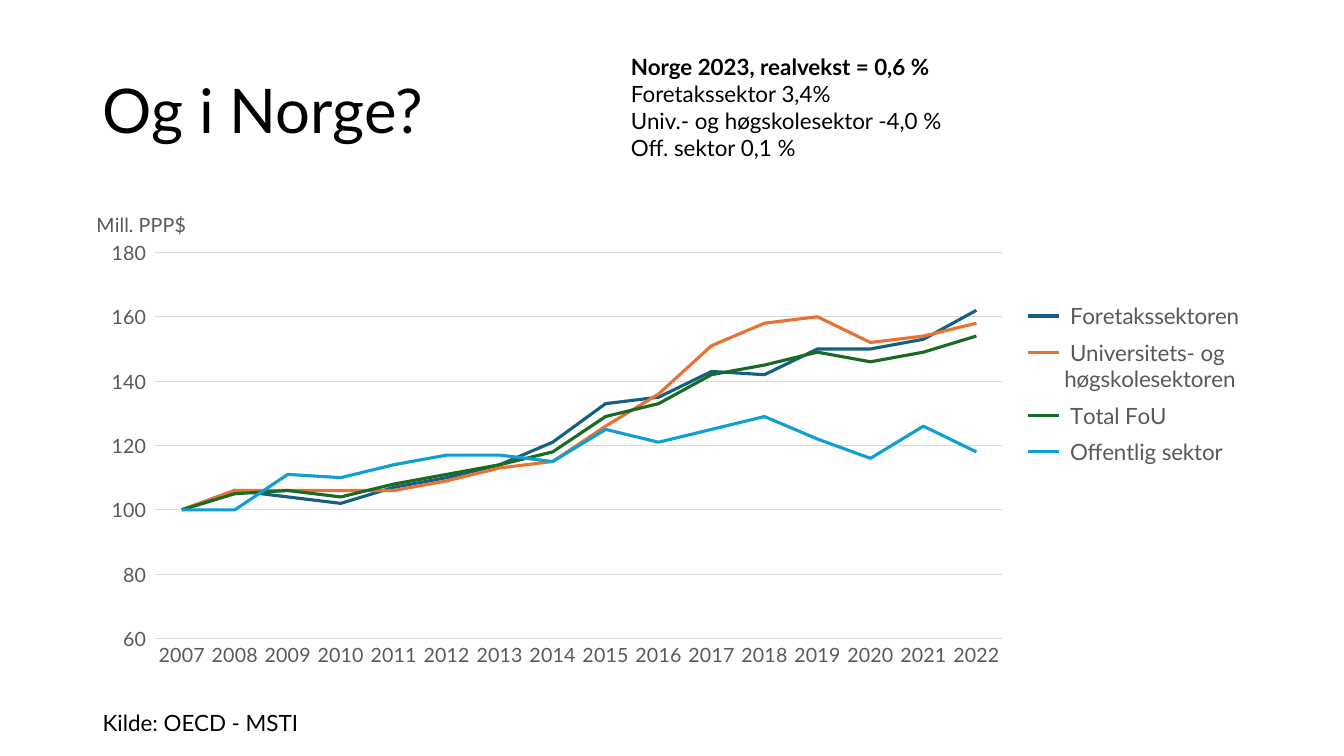
"""Build the slide on Norwegian R&D growth by sector, with a line chart."""
import pptx
import pptx.chart.data
import pptx.dml.color
import pptx.enum.chart
import pptx.enum.text
import pptx.oxml
import pptx.oxml.ns
import pptx.util

THEME = {
    "font": "Lato", "text": "000000", "muted": "595959", "grid": "D9D9D9",
    "title": 44, "body": 16, "axis": 14, "hairline": 0.75, "series": 2.25,
}


def write(tf, text, size=THEME["body"], color=THEME["text"], bold_first=False, spacing=None):
    for i, line in enumerate(text.split("\n")):
        p = tf.add_paragraph() if i else tf.paragraphs[0]
        p.alignment = pptx.enum.text.PP_ALIGN.LEFT
        p.line_spacing = spacing
        r = p.add_run()
        r.text = line
        r.font.name = THEME["font"]
        r.font.size = pptx.util.Pt(size)
        r.font.bold = bold_first and i == 0
        r.font.color.rgb = pptx.dml.color.RGBColor.from_string(color)


def place(parent, index, target=None, **shares):
    for old in parent.findall(pptx.oxml.ns.qn("c:layout")):
        parent.remove(old)
    inner = f'<c:layoutTarget val="{target}"/>' if target else ""
    inner += "".join(f'<c:{k}Mode val="edge"/>' for k in "xy")
    inner += "".join(f'<c:{k} val="{v}"/>' for k, v in shares.items())
    parent.insert(index, pptx.oxml.parse_xml(
        f'<c:layout {pptx.oxml.ns.nsdecls("c")}><c:manualLayout>{inner}</c:manualLayout></c:layout>'))


rgb = pptx.dml.color.RGBColor.from_string
Inches, Pt = pptx.util.Inches, pptx.util.Pt
prs = pptx.Presentation()
prs.slide_width, prs.slide_height = Inches(13.33), Inches(7.5)
s = prs.slides.add_slide(prs.slide_layouts[5])
left, width = Inches(0.92), Inches(11.5)

sp = s.shapes.title
sp.left, sp.top, sp.width, sp.height = left, Inches(0.4), width, Inches(1.45)
sp.text_frame.auto_size = pptx.enum.text.MSO_AUTO_SIZE.NONE
sp.text_frame.vertical_anchor = pptx.enum.text.MSO_ANCHOR.MIDDLE
write(sp.text_frame, "Og i Norge?", size=THEME["title"], spacing=0.9)

series = [
    (" Foretakssektoren ", "156082",
     [100, 106, 104, 102, 107, 110, 114, 121, 133, 135, 143, 142, 150, 150, 153, 162]),
    (" Universitets- og høgskolesektoren ", "E97132",
     [100, 106, 106, 106, 106, 109, 113, 115, 126, 136, 151, 158, 160, 152, 154, 158]),
    (" Total FoU ", "196B24",
     [100, 105, 106, 104, 108, 111, 114, 118, 129, 133, 142, 145, 149, 146, 149, 154]),
    (" Offentlig sektor ", "0F9ED5",
     [100, 100, 111, 110, 114, 117, 117, 115, 125, 121, 125, 129, 122, 116, 126, 118]),
]
data = pptx.chart.data.CategoryChartData()
data.categories = [str(year) for year in range(2007, 2023)]
for name, color, values in series:
    data.add_series(name, values)
chart = s.shapes.add_chart(
    pptx.enum.chart.XL_CHART_TYPE.LINE, left, Inches(2), width, Inches(4.76), data).chart
chart.has_title = False
chart.font.name, chart.font.size = THEME["font"], Pt(THEME["axis"])
chart.plots[0].vary_by_categories = False
for line, (name, color, values) in zip(chart.plots[0].series, series):
    line.smooth = False
    line.marker.style = pptx.enum.chart.XL_MARKER_STYLE.NONE
    line.format.line.width = Pt(THEME["series"])
    line.format.line.color.rgb = rgb(color)

years, index = chart.category_axis, chart.value_axis
for axis in (years, index):
    axis.major_tick_mark = axis.minor_tick_mark = pptx.enum.chart.XL_TICK_MARK.NONE
    axis.tick_labels.font.name = THEME["font"]
    axis.tick_labels.font.size = Pt(THEME["axis"])
    axis.tick_labels.font.color.rgb = rgb(THEME["muted"])
index.minimum_scale, index.maximum_scale, index.major_unit = 60, 180, 20
index.tick_labels.number_format = "0_-"
index.tick_labels.number_format_is_linked = False
index.format.line.fill.background()
for rule in (years.format.line, index.major_gridlines.format.line):
    rule.color.rgb = rgb(THEME["grid"])
    rule.width = Pt(THEME["hairline"])
write(years.axis_title.text_frame, "Mill. PPP$", size=THEME["axis"], color=THEME["muted"])

chart.has_legend = True
legend = chart.legend
legend.position = pptx.enum.chart.XL_LEGEND_POSITION.RIGHT
legend.include_in_layout = False
legend.font.name, legend.font.size = THEME["font"], Pt(THEME["body"])
legend.font.color.rgb = rgb(THEME["muted"])

plot_area = chart.plots[0]._element.getparent()
place(plot_area, 0, target="inner", x=0.054, y=0.106, w=0.731, h=0.805)
place(years.axis_title._element, 1, x=0.0, y=0.01)
place(legend._element, 1, x=0.8, y=0.19, w=0.2, h=0.38)

notes = [
    ("Norge 2023, realvekst = 0,6 %\nForetakssektor 3,4%\n"
     "Univ.- og høgskolesektor -4,0 %\nOff. sektor 0,1 %", 6.16, 0.48, 3.54, 1.18, True),
    ("Kilde: OECD - MSTI", 0.92, 6.99, 2.75, 0.37, False),
]
for text, x, y, w, h, bold_first in notes:
    tf = s.shapes.add_textbox(Inches(x), Inches(y), Inches(w), Inches(h)).text_frame
    tf.word_wrap = True
    tf.auto_size = pptx.enum.text.MSO_AUTO_SIZE.SHAPE_TO_FIT_TEXT
    write(tf, text, bold_first=bold_first)

prs.save("out.pptx")
